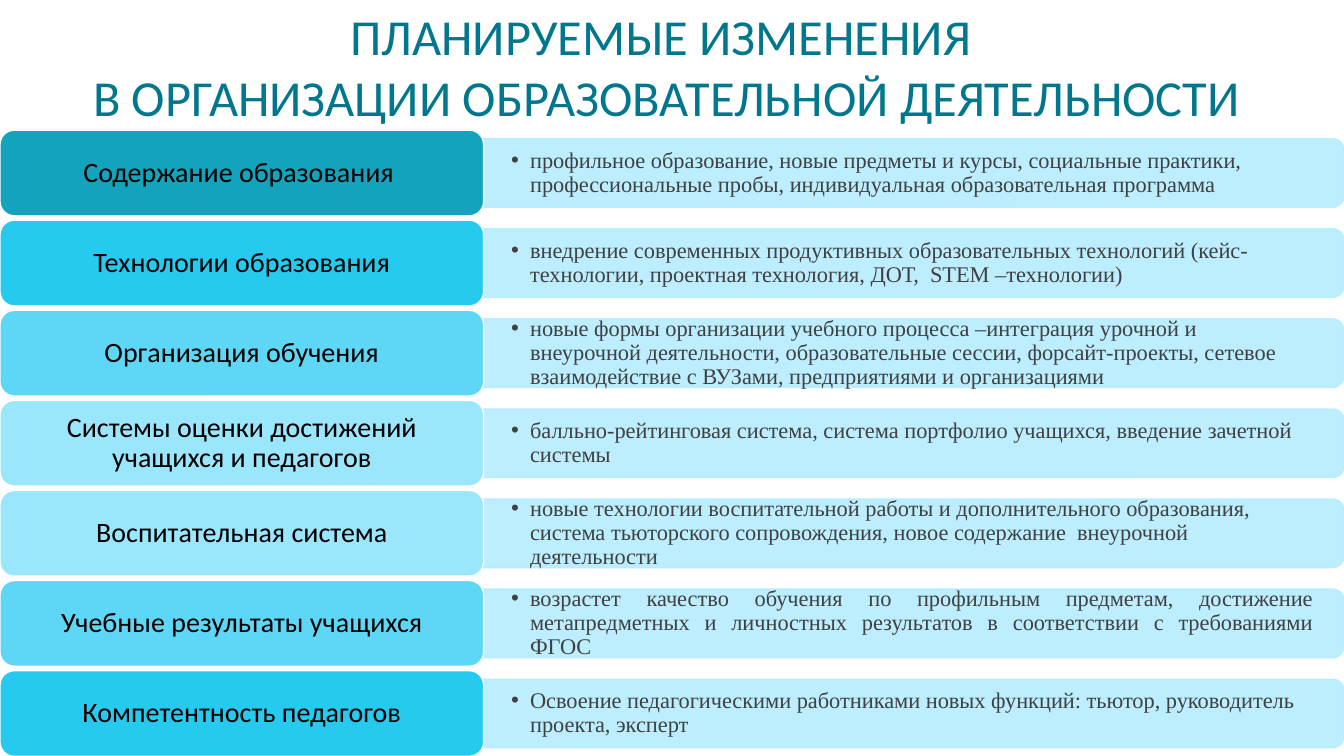
"""Build the slide on planned changes in educational activity."""
import pptx
import pptx.dml.color
import pptx.enum.shapes
import pptx.enum.text
import pptx.oxml.ns
import pptx.util
from lxml import etree

Cm = pptx.util.Cm
Pt = pptx.util.Pt
ALIGN = pptx.enum.text.PP_ALIGN
SHAPE = pptx.enum.shapes.MSO_SHAPE
qn = pptx.oxml.ns.qn

WIDE, HIGH = 33.87, 19.05
TOP, STEP, TALL = 3.28, 2.27, 2.16
SPLIT = 12.19

TITLE = "ПЛАНИРУЕМЫЕ ИЗМЕНЕНИЯ \nВ ОРГАНИЗАЦИИ ОБРАЗОВАТЕЛЬНОЙ ДЕЯТЕЛЬНОСТИ"
ROWS = [
    ("Содержание образования ", "14A3BD", ALIGN.LEFT,
     "профильное образование, новые предметы и курсы, социальные практики, "
     "профессиональные пробы, индивидуальная образовательная программа"),
    ("Технологии образования", "25CAEE", ALIGN.LEFT,
     "внедрение современных продуктивных образовательных технологий (кейс- "
     "технологии, проектная технология, ДОТ,  STEM –технологии)"),
    ("Организация обучения", "5ED7F7", ALIGN.LEFT,
     "новые формы организации учебного процесса –интеграция урочной и "
     "внеурочной деятельности, образовательные сессии, форсайт-проекты, "
     "сетевое взаимодействие с ВУЗами, предприятиями и организациями"),
    ("Системы оценки достижений учащихся и педагогов", "9AE6FC", ALIGN.LEFT,
     "балльно-рейтинговая система, система портфолио учащихся, "
     "введение зачетной системы"),
    ("Воспитательная система", "9AE6FC", ALIGN.LEFT,
     "новые технологии воспитательной работы и дополнительного образования, "
     "система тьюторского сопровождения, новое содержание  внеурочной "
     "деятельности"),
    ("Учебные результаты учащихся", "5ED7F7", ALIGN.JUSTIFY,
     "возрастет качество обучения по профильным предметам, достижение "
     "метапредметных и личностных результатов в соответствии с требованиями "
     "ФГОС "),
    ("Компетентность педагогов", "25CAEE", ALIGN.LEFT,
     "Освоение педагогическими работниками новых функций: тьютор, "
     "руководитель проекта, эксперт"),
]


def tint(color, code, alpha=None):
    """Set a colour from a hex string, with an optional opacity in percent."""
    color.rgb = pptx.dml.color.RGBColor.from_string(code)
    if alpha:
        for node in color._xFill.iter(qn("a:srgbClr")):
            etree.SubElement(node, qn("a:alpha"), val=str(alpha * 1000))


def paint(shape, fill, line, alpha=None):
    """Give a shape a flat fill and a thin line without a shadow."""
    shape.shadow.inherit = False
    shape.fill.solid()
    tint(shape.fill.fore_color, fill, alpha)
    shape.line.width = Pt(1)
    shape.line.fill.solid()
    tint(shape.line.fill.fore_color, line, alpha)


def write(frame, text, font="Calibri", size=20, color="000000",
          align=ALIGN.CENTER, space=0.9, pad=(0.3, 0.2), bullet=None):
    """Fill a text frame with one formatted paragraph per line of text."""
    frame.word_wrap = True
    frame.auto_size = pptx.enum.text.MSO_AUTO_SIZE.NONE
    frame.vertical_anchor = pptx.enum.text.MSO_ANCHOR.MIDDLE
    frame.margin_left = frame.margin_right = Cm(pad[0])
    frame.margin_top = frame.margin_bottom = Cm(pad[1])
    frame.text = text
    for para in frame.paragraphs:
        if bullet:
            para.level = 1
            props = para._p.get_or_add_pPr()
            props.set("marL", str(Cm(0.48)))
            props.set("indent", str(-Cm(0.48)))
            etree.SubElement(props, qn("a:buFont"), typeface="Arial")
            etree.SubElement(props, qn("a:buChar"), char=bullet)
        para.alignment = align
        para.line_spacing = space
        for run in para.runs:
            run.font.name = font
            run.font.size = Pt(size)
            tint(run.font.color, color)


def head(slide, left, top, width, height):
    """Place the two-line heading in the title placeholder."""
    title = slide.shapes.title
    title.left, title.top = Cm(left), Cm(top)
    title.width, title.height = Cm(width), Cm(height)
    write(title.text_frame, TITLE, size=36, color="00778D", space=1.0,
          pad=(0.25, 0.13))


def detail(slide, text, align, left, top, width, height):
    """Place a panel rounded on its right side, with a bulleted text."""
    turn = (width - height) / 2
    panel = slide.shapes.add_shape(
        SHAPE.ROUND_2_SAME_RECTANGLE, Cm(left + turn), Cm(top - turn),
        Cm(height), Cm(width))
    panel.rotation = 90
    paint(panel, "B5EDFF", "B5EDFF", alpha=90)
    box = slide.shapes.add_textbox(
        Cm(left), Cm(top + 0.08), Cm(width - 0.08), Cm(height - 0.16))
    write(box.text_frame, text, font="Times New Roman", size=16,
          color="404040", align=align, pad=(0.69, 0.36), bullet="•")


def label(slide, text, fill, left, top, width, height):
    """Place a rounded label with centred text."""
    tab = slide.shapes.add_shape(
        SHAPE.ROUNDED_RECTANGLE, Cm(left), Cm(top), Cm(width), Cm(height))
    paint(tab, fill, "FFFFFF")
    write(tab.text_frame, text)


def band(slide, row, left, top, width, height):
    """Place one row: a label on the left and its details on the right."""
    name, fill, align, text = row
    thin = height * 0.8
    detail(slide, text, align, left + SPLIT, top + (height - thin) / 2,
           width - SPLIT, thin)
    label(slide, name, fill, left, top, SPLIT, height)


def main():
    """Build and save the deck."""
    deck = pptx.Presentation()
    deck.slide_width, deck.slide_height = Cm(WIDE), Cm(HIGH)
    slide = deck.slides.add_slide(deck.slide_layouts[5])
    head(slide, 0.53, 0, 32.54, 3.33)
    for i, row in enumerate(ROWS):
        band(slide, row, 0, TOP + i * STEP, WIDE, TALL)
    deck.save("out.pptx")


if __name__ == "__main__":
    main()
